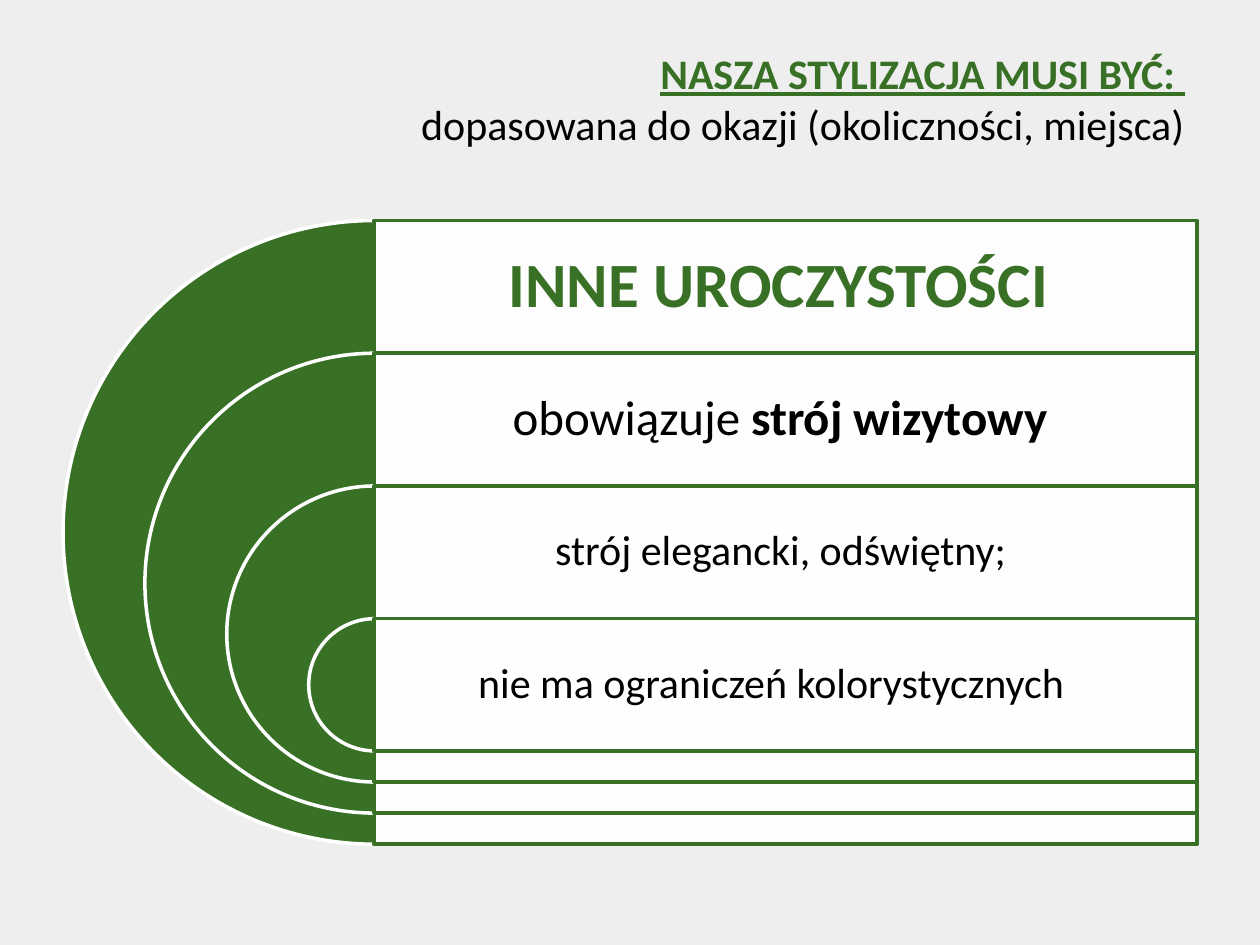
"""Build the slide on dress for other celebrations as nested half circles."""
import pptx
import pptx.dml.color
import pptx.enum.shapes
import pptx.enum.text
import pptx.oxml
import pptx.oxml.ns
import pptx.util
from pptx.util import Inches

GREEN, WHITE, BLACK = "387025", "FFFFFF", "000000"
SHAPE = pptx.enum.shapes.MSO_SHAPE
ALIGN = pptx.enum.text.PP_ALIGN
ANCHOR = pptx.enum.text.MSO_ANCHOR


def paint(color, value):
    color.rgb = pptx.dml.color.RGBColor.from_string(value)


def add_run(p, text, size, value, bold=False, underline=False):
    r = p.add_run()
    r.text = text
    r.font.name = "Calibri"
    r.font.size = pptx.util.Pt(size)
    r.font.bold = bold
    r.font.underline = underline
    paint(r.font.color, value)


prs = pptx.Presentation()
prs.slide_width, prs.slide_height = Inches(10), Inches(7.5)
s = prs.slides.add_slide(prs.slide_layouts[6])
s.background.fill.solid()
paint(s.background.fill.fore_color, "EEEEEE")

rows = [
    (0.15, 0.15, 36, GREEN, [("INNE UROCZYSTOŚCI ", True)]),
    (0.12, 0.12, 28, BLACK, [("obowiązuje ", False), ("strój wizytowy ", True)]),
    (0.1, 0.1, 24, BLACK, [("strój elegancki, odświętny; ", False)]),
    (0.1, 0.25, 24, BLACK, [("nie ma ograniczeń kolorystycznych ", False)]),
]
band_left, band_width, row_height = Inches(2.97), Inches(6.53), Inches(1.05)

for i, (inset, right_inset, size, value, runs) in enumerate(rows):
    top = Inches(1.75 + 3.16 * i / 3)
    diameter = Inches(4.95 - 1.3 * i)

    pie = s.shapes.add_shape(SHAPE.PIE, Inches(0.5 + 0.65 * i), top, diameter, diameter)
    pie.adjustments[0], pie.adjustments[1] = 54, 162
    band = s.shapes.add_shape(SHAPE.RECTANGLE, band_left, top, band_width, diameter)
    for sp, fill, line in ((pie, GREEN, WHITE), (band, WHITE, GREEN)):
        sp.shadow.inherit = False
        sp.fill.solid()
        paint(sp.fill.fore_color, fill)
        paint(sp.line.color, line)
        sp.line.width = pptx.util.Pt(2)
    srgb = band.fill._xPr.find(".//" + pptx.oxml.ns.qn("a:srgbClr"))
    srgb.append(pptx.oxml.parse_xml(
        '<a:alpha %s val="90000"/>' % pptx.oxml.ns.nsdecls("a")))

    tf = s.shapes.add_textbox(band_left, top, band_width, row_height).text_frame
    tf.word_wrap = True
    tf.vertical_anchor = ANCHOR.MIDDLE
    tf.margin_left = tf.margin_top = tf.margin_bottom = Inches(inset)
    tf.margin_right = Inches(right_inset)
    p = tf.paragraphs[0]
    p.alignment = ALIGN.CENTER
    p.line_spacing = 0.9
    for text, bold in runs:
        add_run(p, text, size, value, bold)

tf = s.shapes.add_textbox(Inches(0.5), Inches(0.39), Inches(9), Inches(0.84)).text_frame
tf.word_wrap = True
tf.vertical_anchor = ANCHOR.BOTTOM
p = tf.paragraphs[0]
p.alignment = ALIGN.RIGHT
add_run(p, "NASZA STYLIZACJA MUSI BYĆ: ", 24, GREEN, True, True)
p.add_line_break()
add_run(p, "dopasowana do okazji (okoliczności, miejsca)", 24, BLACK)

prs.save("out.pptx")
